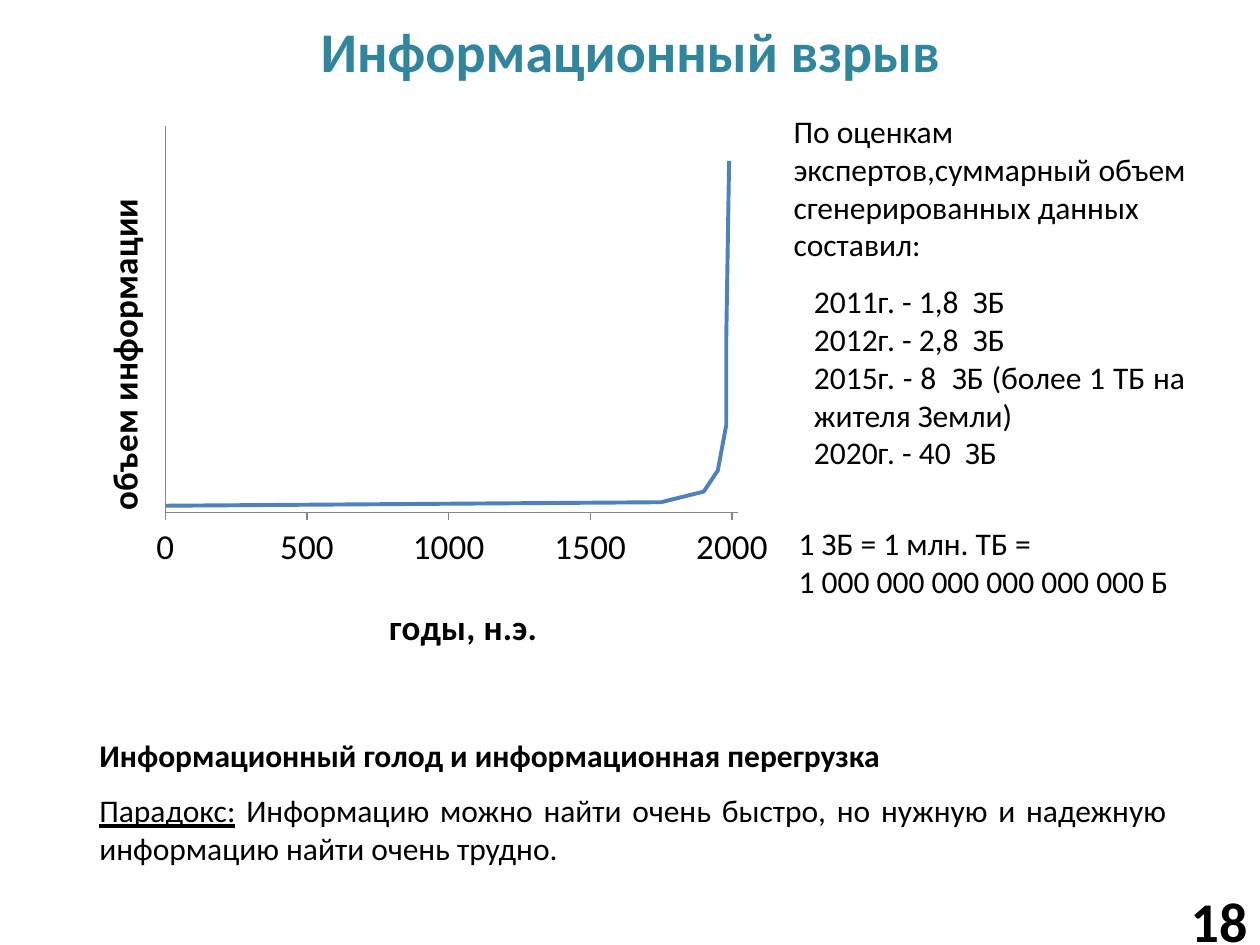
from dataclasses import dataclass

from lxml import etree
from pptx import Presentation
from pptx import util as u
from pptx.chart.data import XyChartData
from pptx.dml.color import RGBColor
from pptx.enum import chart as ch
from pptx.enum import text as t
from pptx.oxml import parse_xml
from pptx.oxml.ns import nsdecls, qn

FONT = "Calibri"
BLACK = RGBColor(0, 0, 0)
TEAL = RGBColor(0x31, 0x85, 0x9C)
BLUE = RGBColor(0x4F, 0x81, 0xBD)
GREY = RGBColor(0x86, 0x86, 0x86)
LEFT, CENTER = t.PP_ALIGN.LEFT, t.PP_ALIGN.CENTER
RIGHT, JUSTIFY = t.PP_ALIGN.RIGHT, t.PP_ALIGN.JUSTIFY
TOP, MIDDLE = t.MSO_ANCHOR.TOP, t.MSO_ANCHOR.MIDDLE


@dataclass
class Passage:
    left: float
    top: float
    width: float
    height: float
    lines: list[str]
    size: int = 18
    bold: bool = False
    color: RGBColor = BLACK
    align: t.PP_ALIGN = LEFT
    anchor: t.MSO_ANCHOR = TOP
    lead: str = ""  # underlined opening words of the first line


HEADING = Passage(0.28, 0.05, 9.45, 0.69, ["Информационный взрыв"],
                  32, True, TEAL, CENTER, MIDDLE)
YEARS = Passage(6.36, 2.19, 3.15, 1.62, [
    "2011г. - 1,8  ЗБ",
    "2012г. - 2,8  ЗБ",
    "2015г. - 8  ЗБ (более 1 ТБ на жителя Земли)",
    "2020г. - 40  ЗБ",
], align=JUSTIFY)
PASSAGES = [
    Passage(8.86, 7.1, 1.14, 0.4, ["18"], 32, True, align=RIGHT, anchor=MIDDLE),
    Passage(0.69, 6.23, 8.67, 0.71,
            [" Информацию можно найти очень быстро, но нужную и надежную "
             "информацию найти очень трудно."],
            align=JUSTIFY, lead="Парадокс:"),
    Passage(0.69, 5.79, 8.59, 0.4,
            ["Информационный голод и информационная перегрузка"], bold=True),
    Passage(6.2, 0.84, 3.47, 1.31,
            ["По оценкам экспертов,суммарный объем сгенерированных данных составил:"]),
    Passage(6.24, 4.11, 3.35, 0.71,
            ["1 ЗБ = 1 млн. ТБ =", "1 000 000 000 000 000 000 Б"]),
]
GROWTH = [(0, 2), (1750, 3), (1900, 6), (1950, 12), (1980, 25), (1980, 50), (1990, 100)]


def style_font(font, size: int, bold: bool, color: RGBColor) -> None:
    font.name, font.size, font.bold = FONT, u.Pt(size), bold
    font.color.rgb = color


def write(shape, passage: Passage) -> None:
    """Place a placeholder or text box and fill it with the passage."""
    shape.left, shape.top = u.Inches(passage.left), u.Inches(passage.top)
    shape.width, shape.height = u.Inches(passage.width), u.Inches(passage.height)
    frame = shape.text_frame
    frame.text = "\n".join(passage.lines)
    frame.word_wrap = True
    frame.auto_size = t.MSO_AUTO_SIZE.NONE
    frame.vertical_anchor = passage.anchor
    if passage.lead:
        opening = frame.paragraphs[0]
        rest = opening.text
        opening.text = passage.lead
        opening.runs[0].font.underline = True
        opening.add_run().text = rest
    for paragraph in frame.paragraphs:
        paragraph.alignment = passage.align
        paragraph.space_before = u.Pt(0)
        for run in paragraph.runs:
            style_font(run.font, passage.size, passage.bold, passage.color)


def remove_bullets(frame) -> None:
    for paragraph in frame.paragraphs:
        properties = paragraph._p.get_or_add_pPr()
        properties.set("marL", "0")
        properties.set("indent", "0")
        etree.SubElement(properties, qn("a:buNone"))


def inner_layout(x: float, y: float, size: tuple[float, ...] = ()):
    """Manual chart layout, in fractions of the chart area."""
    target = '<c:layoutTarget val="inner"/>' if size else ""
    extent = "".join(f'<c:{tag} val="{value}"/>' for tag, value in zip("wh", size))
    return parse_xml(
        f'<c:layout {nsdecls("c")}><c:manualLayout>{target}'
        f'<c:xMode val="edge"/><c:yMode val="edge"/>'
        f'<c:x val="{x}"/><c:y val="{y}"/>{extent}</c:manualLayout></c:layout>')


def set_layout(parent, layout, index: int) -> None:
    for old in parent.findall(qn("c:layout")):
        parent.remove(old)
    parent.insert(index, layout)


def style_axis(axis, caption: str, maximum: int, x: float, y: float) -> None:
    axis.minimum_scale, axis.maximum_scale = 0, maximum
    axis.has_major_gridlines = False
    axis.format.line.color.rgb = GREY
    axis.format.line.width = u.Pt(0.75)
    frame = axis.axis_title.text_frame
    frame.text = caption
    style_font(frame.paragraphs[0].runs[0].font, 20, True, BLACK)
    set_layout(axis.axis_title._element, inner_layout(x, y), 1)


def add_growth_chart(slide) -> None:
    data = XyChartData()
    series = data.add_series("Series 1")
    for year, volume in GROWTH:
        series.add_data_point(year, volume)
    chart = slide.shapes.add_chart(
        ch.XL_CHART_TYPE.XY_SCATTER_SMOOTH_NO_MARKERS, u.Inches(0.45), u.Inches(0.91),
        u.Inches(5.75), u.Inches(4.39), data).chart
    chart.has_legend = chart.has_title = False
    style_font(chart.font, 20, False, BLACK)
    plot = chart.plots[0]
    plot.vary_by_categories = False
    curve = plot.series[0]
    curve.smooth = True
    curve.marker.style = ch.XL_MARKER_STYLE.NONE
    curve.format.line.color.rgb = BLUE
    curve.format.line.width = u.Pt(2.25)

    years, volumes = chart.category_axis, chart.value_axis
    style_axis(years, "годы, н.э.", 2020, 0.45, 0.87)
    years.major_unit = 500
    years.major_tick_mark = ch.XL_TICK_MARK.OUTSIDE
    style_axis(volumes, "объем информации", 110, 0.05, 0.14)
    volumes.major_tick_mark = ch.XL_TICK_MARK.NONE
    volumes.tick_label_position = ch.XL_TICK_LABEL_POSITION.NONE
    body = volumes.axis_title.text_frame._txBody.bodyPr
    body.set("rot", "-5400000")
    body.set("vert", "horz")
    plot_area = chart._chartSpace.chart.plotArea
    set_layout(plot_area, inner_layout(0.15, 0.02, (0.79, 0.7)), 0)


def main() -> None:
    deck = Presentation()
    deck.slide_width, deck.slide_height = u.Inches(10), u.Inches(7.5)
    slide = deck.slides.add_slide(deck.slide_layouts[1])
    write(slide.shapes.title, HEADING)
    years = slide.placeholders[1]
    write(years, YEARS)
    remove_bullets(years.text_frame)
    add_growth_chart(slide)
    for passage in PASSAGES:
        write(slide.shapes.add_textbox(0, 0, 0, 0), passage)
    deck.save("out.pptx")


if __name__ == "__main__":
    main()
